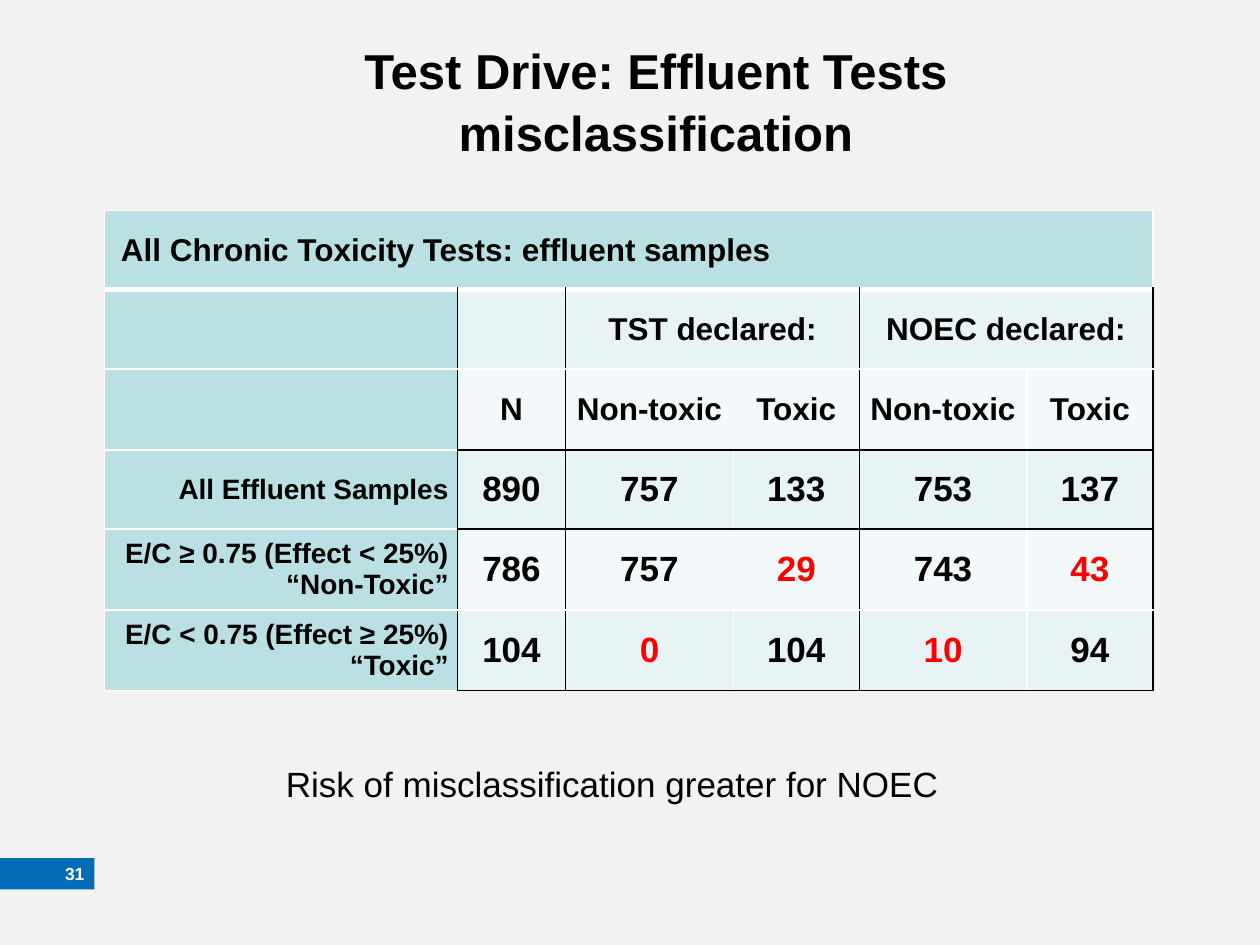
from pptx import Presentation
from pptx.dml.color import RGBColor
from pptx.enum import shapes, text
from pptx.oxml import ns, xmlchemy
from pptx.util import Inches, Pt

BLACK = RGBColor(0x00, 0x00, 0x00)
WHITE = RGBColor(0xFF, 0xFF, 0xFF)
RED = RGBColor(0xFF, 0x00, 0x00)
BLUE = RGBColor(0x02, 0x6C, 0xB6)
GRAY = RGBColor(0xF2, 0xF2, 0xF2)
TEAL = RGBColor(0xBB, 0xE0, 0xE3)
BAND_DARK = RGBColor(0xE7, 0xF3, 0xF4)
BAND_LIGHT = RGBColor(0xF3, 0xF9, 0xFA)

COL_WIDTHS = [2.8, 0.86, 1.33, 1, 1.33, 1]
ROW_HEIGHTS = [0.63, 0.63, 0.64, 0.63, 0.64, 0.64]
ROWS = [
    ["All Chronic Toxicity Tests: effluent samples", "", "", "", "", ""],
    ["", "", "TST declared:", "", "NOEC declared:", ""],
    ["", "N", "Non-toxic", "Toxic", "Non-toxic", "Toxic"],
    ["All Effluent Samples", "890", "757", "133", "753", "137"],
    ["E/C ≥ 0.75 (Effect < 25%)\n“Non-Toxic”", "786", "757", "29", "743", "43"],
    ["E/C < 0.75 (Effect ≥ 25%)\n“Toxic”", "104", "0", "104", "10", "94"],
]
MERGES = [(0, 0, 5), (1, 2, 3), (1, 4, 5)]
MISCLASSIFIED = {(4, 3), (4, 5), (5, 2), (5, 4)}
COL_EDGES = [WHITE, BLACK, BLACK, WHITE, BLACK, WHITE, BLACK]
ROW_EDGES = [WHITE, WHITE, WHITE, BLACK, BLACK, WHITE, BLACK]


def write(tf, lines, size, color=BLACK, bold=True, align=text.PP_ALIGN.LEFT,
          spacing=None):
    """Fill a text frame with one formatted paragraph per line."""
    for i, line in enumerate(lines):
        p = tf.paragraphs[0] if i == 0 else tf.add_paragraph()
        p.text = line
        p.alignment = align
        p.line_spacing = spacing
        for r in p.runs:
            r.font.name = "Arial"
            r.font.size = Pt(size)
            r.font.bold = bold
            r.font.color.rgb = color


def set_border(cell, side, color, width=1):
    """Draw one side (L, R, T or B) of a table cell."""
    ln = xmlchemy.OxmlElement(f"a:ln{side}")
    ln.set("w", str(Pt(width)))
    fill = xmlchemy.OxmlElement("a:solidFill")
    clr = xmlchemy.OxmlElement("a:srgbClr")
    clr.set("val", str(color))
    fill.append(clr)
    ln.append(fill)
    cell._tc.get_or_add_tcPr().append(ln)


def style_cell(cell, row, col):
    """Set the borders, fill and margins of a cell by its place in the grid."""
    header = row == 0
    label = col == 0
    set_border(cell, "L", WHITE if header else COL_EDGES[col])
    set_border(cell, "R", WHITE if header else COL_EDGES[col + 1])
    set_border(cell, "T", WHITE if label else ROW_EDGES[row], 3 if row == 1 else 1)
    set_border(cell, "B", WHITE if label else ROW_EDGES[row + 1], 3 if header else 1)
    cell.fill.solid()
    if header or label:
        cell.fill.fore_color.rgb = TEAL
    else:
        cell.fill.fore_color.rgb = BAND_DARK if row % 2 else BAND_LIGHT
    cell.margin_left = Inches(0.13 if header else 0.07)
    cell.margin_right = Inches(0.07)
    cell.margin_top = cell.margin_bottom = 0
    cell.vertical_anchor = text.MSO_ANCHOR.MIDDLE


def write_cell(cell, row, col, content):
    """Write a cell's text in the format of its row and column."""
    if row == 0:
        size, align = 18, text.PP_ALIGN.LEFT
    elif col == 0:
        size, align = 16, text.PP_ALIGN.RIGHT
    else:
        size, align = 18 if row < 3 else 20, text.PP_ALIGN.CENTER
    color = RED if (row, col) in MISCLASSIFIED else BLACK
    write(cell.text_frame, content.split("\n"), size, color=color, align=align)


def add_results_table(slide):
    """Add the table of test results."""
    frame = slide.shapes.add_table(len(ROWS), len(COL_WIDTHS), Inches(0.83),
                                   Inches(1.67), Inches(8.33), Inches(3.83))
    table = frame.table
    table.first_row = table.horz_banding = False
    for column, width in zip(table.columns, COL_WIDTHS):
        column.width = Inches(width)
    for row, height in zip(table.rows, ROW_HEIGHTS):
        row.height = Inches(height)
    for i, contents in enumerate(ROWS):
        for j, content in enumerate(contents):
            cell = table.cell(i, j)
            style_cell(cell, i, j)
            if content:
                write_cell(cell, i, j, content)
    for row, first, last in MERGES:
        table.cell(row, first).merge(table.cell(row, last))
        set_right = table.cell(row, first)._tc.tcPr.find(ns.qn("a:lnR"))
        edge = WHITE if row == 0 else COL_EDGES[last + 1]
        set_right.find(".//" + ns.qn("a:srgbClr")).set("val", str(edge))


def add_title(slide, content):
    """Place and fill the title placeholder."""
    sp = slide.shapes.title
    sp.left, sp.top = Inches(1.54), Inches(0.25)
    sp.width, sp.height = Inches(7.33), Inches(1.23)
    sp.text_frame.vertical_anchor = text.MSO_ANCHOR.TOP
    write(sp.text_frame, [content], 28, align=text.PP_ALIGN.CENTER, spacing=1.05)


def add_page_number(slide, number):
    """Add the blue tab with the page number."""
    sp = slide.shapes.add_shape(shapes.MSO_SHAPE.RECTANGLE, 0, Inches(6.81),
                                Inches(0.75), Inches(0.25))
    sp.shadow.inherit = False
    sp.fill.solid()
    sp.fill.fore_color.rgb = BLUE
    sp.line.fill.background()
    tf = sp.text_frame
    tf.margin_left = tf.margin_top = tf.margin_bottom = 0
    tf.margin_right = Inches(0.08)
    tf.vertical_anchor = text.MSO_ANCHOR.MIDDLE
    write(tf, [number], 10, color=WHITE, align=text.PP_ALIGN.RIGHT)


def add_conclusion(slide, content):
    """Add the closing statement below the table."""
    sp = slide.shapes.add_textbox(Inches(2.17), Inches(6), Inches(6.08), Inches(0.44))
    sp.text_frame.word_wrap = True
    write(sp.text_frame, [content], 20, bold=False)


def main():
    """Build and save the slide."""
    prs = Presentation()
    prs.slide_width, prs.slide_height = Inches(10), Inches(7.5)
    slide = prs.slides.add_slide(prs.slide_layouts[5])
    slide.background.fill.solid()
    slide.background.fill.fore_color.rgb = GRAY
    add_page_number(slide, "31")
    add_conclusion(slide, "Risk of misclassification greater for NOEC")
    add_title(slide, "Test Drive: Effluent Tests\nmisclassification")
    add_results_table(slide)
    prs.save("out.pptx")


if __name__ == "__main__":
    main()
